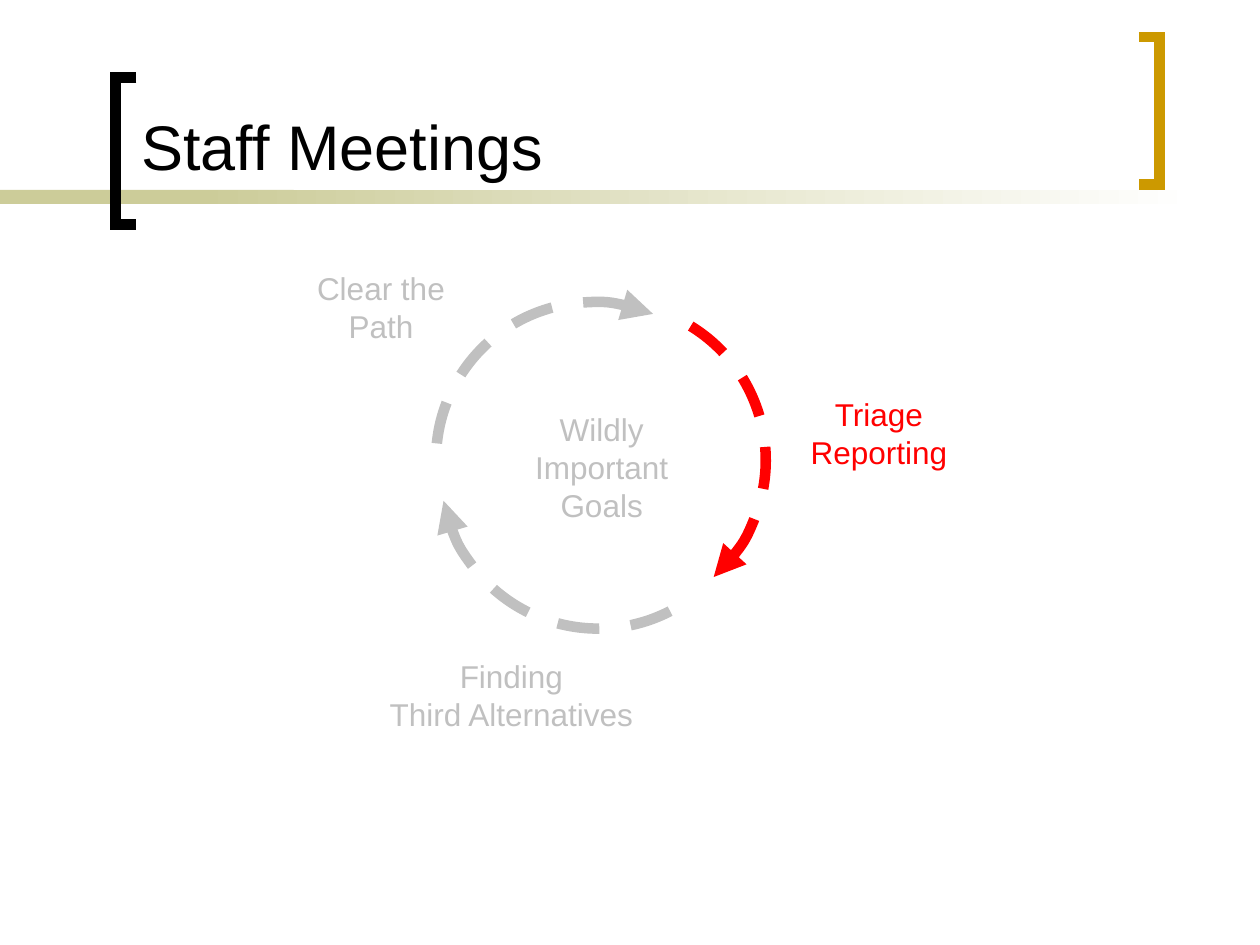
import math

import pptx
import pptx.dml.color
import pptx.enum.dml
import pptx.enum.shapes
import pptx.enum.text
import pptx.oxml.ns
import pptx.util
from lxml import etree

Cm = pptx.util.Cm
qn = pptx.oxml.ns.qn
ANCHOR = pptx.enum.text.MSO_ANCHOR
ALIGN = pptx.enum.text.PP_ALIGN
BLACK, GREY, RED = "000000", "C0C0C0", "FF0000"
KHAKI, GOLD, WHITE = "CCCC99", "CC9900", "FFFFFF"


def rgb(value):
    return pptx.dml.color.RGBColor.from_string(value)


def set_all(obj, values):
    for name, value in values.items():
        setattr(obj, name, value)


def arc_points(radius, start, end):
    """Return the four Bezier points of an arc about (0, 0), in degrees."""
    a, b = math.radians(start), math.radians(end)
    k = 4 / 3 * math.tan((b - a) / 4)
    unit = [(math.cos(a), math.sin(a)),
            (math.cos(a) - k * math.sin(a), math.sin(a) + k * math.cos(a)),
            (math.cos(b) + k * math.sin(b), math.sin(b) - k * math.cos(b)),
            (math.cos(b), math.sin(b))]
    return [(radius * x, radius * y) for x, y in unit]


class SlideBuilder:
    font = "Arial"
    line_width = pptx.util.Pt(6)
    arc_radius = 3.17
    arc_sweep = 116

    def __init__(self, s):
        self.s = s

    def bar(self, x, y, w, h, color, end_color=None):
        """Add a plain bar, or one fading to end_color from left to right."""
        sp = self.s.shapes.add_shape(
            pptx.enum.shapes.MSO_SHAPE.RECTANGLE, Cm(x), Cm(y), Cm(w), Cm(h))
        sp.shadow.inherit = False
        sp.line.fill.background()
        if end_color is None:
            sp.fill.solid()
            sp.fill.fore_color.rgb = rgb(color)
            return
        sp.fill.gradient()
        sp.fill.gradient_angle = 0
        for stop, position, value in zip(
                sp.fill.gradient_stops, (0, 1), (color, end_color)):
            stop.position = position
            stop.color.rgb = rgb(value)

    def outline(self, points, color):
        """Add an open, unfilled path with mitred corners."""
        start, *rest = [(Cm(x), Cm(y)) for x, y in points]
        builder = self.s.shapes.build_freeform(*start)
        builder.add_line_segments(rest, close=False)
        sp = builder.convert_to_shape()
        sp.shadow.inherit = False
        sp.fill.background()
        sp.line.width = self.line_width
        sp.line.color.rgb = rgb(color)
        ln = sp.line._get_or_add_ln()
        etree.SubElement(ln, qn("a:miter"), lim="800000")
        return sp

    def bracket(self, spine_x, tip_x, top, height, color):
        bottom = top + height
        self.outline([(tip_x, top), (spine_x, top),
                      (spine_x, bottom), (tip_x, bottom)], color)

    def arc_arrow(self, x, y, rotation, color):
        """Add a dashed clockwise arc, its path running from the arrowhead back."""
        points = (arc_points(self.arc_radius, self.arc_sweep, 90)
                  + arc_points(self.arc_radius, 90, 0)[1:])
        left = min(px for px, _ in points)
        sp = self.outline([(x + px - left, y + py) for px, py in points], color)
        sp.rotation = rotation
        outline = sp._element.find(".//" + qn("a:path"))
        lines = outline.findall(qn("a:lnTo"))
        for i in range(0, len(lines), 3):
            curve = etree.SubElement(outline, qn("a:cubicBezTo"))
            for line in lines[i:i + 3]:
                curve.append(line[0])
                outline.remove(line)
        sp.line.dash_style = pptx.enum.dml.MSO_LINE.DASH
        ln = sp.line._get_or_add_ln()
        etree.SubElement(ln, qn("a:headEnd"), type="triangle")

    def text(self, x, y, w, h, lines, color, size=18, align=ALIGN.CENTER,
             **frame):
        box = self.s.shapes.add_textbox(Cm(x), Cm(y), Cm(w), Cm(h))
        tf = box.text_frame
        set_all(tf, {"word_wrap": False, **frame})
        for i, line in enumerate(lines):
            p = tf.paragraphs[0] if i == 0 else tf.add_paragraph()
            p.alignment = align
            r = p.add_run()
            r.text = line
            set_all(r.font, {"name": self.font, "size": pptx.util.Pt(size)})
            r.font.color.rgb = rgb(color)


def main():
    prs = pptx.Presentation()
    set_all(prs, {"slide_width": Cm(25.4), "slide_height": Cm(19.05)})
    b = SlideBuilder(prs.slides.add_slide(prs.slide_layouts[6]))

    b.bar(0, 3.83, 5.92, 0.28, KHAKI)
    b.bar(4.01, 3.83, 20.12, 0.28, KHAKI, WHITE)
    b.bracket(2.33, 2.75, 1.56, 2.97, BLACK)
    b.bracket(23.37, 22.96, 0.75, 2.97, GOLD)
    b.text(2.6, 0.84, 19.89, 2.97, ["Staff Meetings"], BLACK, size=36,
           align=ALIGN.LEFT, word_wrap=True, vertical_anchor=ANCHOR.BOTTOM)

    for x, y, rotation, color in [
            (8.69, 6.15, 176.3, GREY),
            (11.79, 7.46, 292, RED),
            (9.04, 9.58, 53.2, GREY)]:
        b.arc_arrow(x, y, rotation, color)

    for x, y, w, h, lines, color in [
            (10.53, 8.15, 3.2, 2.54, ["Wildly", "Important", "Goals"], GREY),
            (16.02, 7.84, 3.4, 1.78, ["Triage", "Reporting"], RED),
            (7.58, 13.13, 5.46, 1.78, ["Finding", "Third Alternatives"], GREY),
            (6.08, 5.3, 3.2, 1.78, ["Clear the", "Path"], GREY)]:
        b.text(x, y, w, h, lines, color,
               auto_size=pptx.enum.text.MSO_AUTO_SIZE.SHAPE_TO_FIT_TEXT)

    prs.save("out.pptx")


if __name__ == "__main__":
    main()
